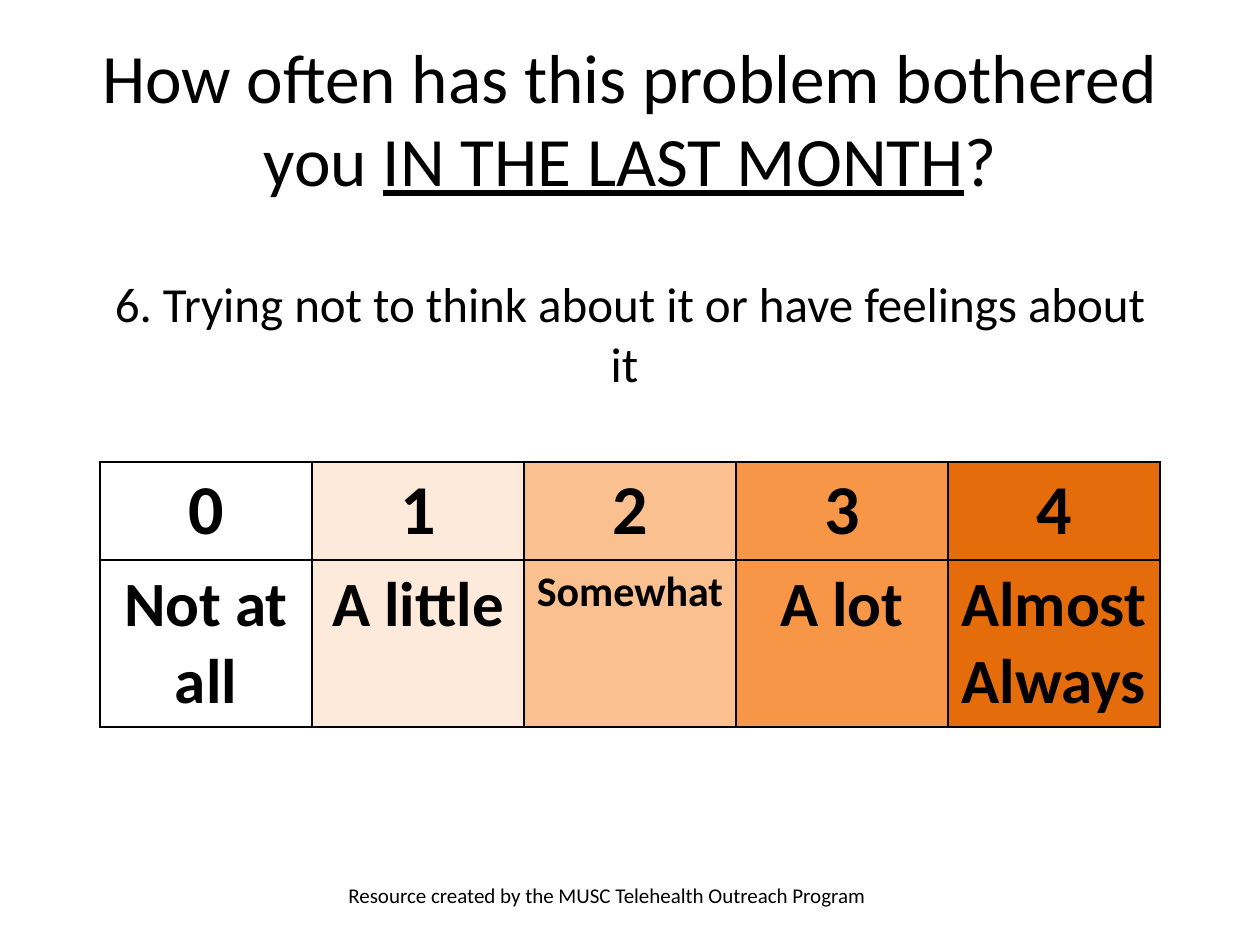
from dataclasses import dataclass

from lxml import etree
from pptx import Presentation
from pptx import util as u
from pptx.dml.color import RGBColor
from pptx.enum import text
from pptx.oxml.ns import qn

PX = u.Inches(1) / 126


@dataclass(frozen=True)
class Theme:
    font: str = "Calibri"
    ink: str = "000000"
    scale_fills: tuple = ("FFFFFF", "FDEADA", "FAC090", "F79646", "E46C0A")
    title: float = 39.6
    question: int = 28
    score: int = 40
    label: int = 36
    long_label: int = 24
    credit: int = 12
    border: int = 1


THEME = Theme()
ANSWERS = ("Not at all", "A little", "Somewhat", "A lot", "Almost Always")


def px(length):
    return u.Emu(round(length * PX))


def add_run(paragraph, words, size, bold=False, underline=False, align=None):
    if align is not None:
        paragraph.alignment = align
    run = paragraph.add_run()
    run.text = words
    font = run.font
    font.name, font.size = THEME.font, u.Pt(size)
    font.bold, font.underline = bold, underline
    font.color.rgb = RGBColor.from_string(THEME.ink)


def add_plain_table(slide, box, row_heights, column_count):
    """Add a table without header or banding; columns share the width equally."""
    left, top, width = box
    table = slide.shapes.add_table(
        len(row_heights), column_count,
        px(left), px(top), px(width), px(sum(row_heights))).table
    table.first_row = table.horz_banding = False
    for row, height in zip(table.rows, row_heights):
        row.height = px(height)
    for column in table.columns:
        column.width = px(width / column_count)
    return table


def fill_cell(cell, color):
    """Fill a cell and rule all its sides; borders must precede the fill in XML."""
    properties = cell._tc.get_or_add_tcPr()
    for side in ("a:lnL", "a:lnR", "a:lnT", "a:lnB"):
        line = etree.SubElement(properties, qn(side), w=str(u.Pt(THEME.border)))
        solid = etree.SubElement(line, qn("a:solidFill"))
        etree.SubElement(solid, qn("a:srgbClr"), val=THEME.ink)
    cell.fill.solid()
    cell.fill.fore_color.rgb = RGBColor.from_string(color)


def place_title(slide, left, top, width, height):
    title = slide.shapes.title
    title.left, title.top, title.width, title.height = map(
        px, (left, top, width, height))
    frame = title.text_frame
    frame.word_wrap = True
    frame.auto_size = text.MSO_AUTO_SIZE.NONE
    frame.vertical_anchor = text.MSO_ANCHOR.MIDDLE
    paragraph = frame.paragraphs[0]
    add_run(paragraph, "How often has this problem bothered you ", THEME.title,
            align=text.PP_ALIGN.CENTER)
    add_run(paragraph, "IN THE LAST MONTH", THEME.title, underline=True)
    add_run(paragraph, "?", THEME.title)


def place_question(slide, left, top, width, height):
    cell = add_plain_table(slide, (left, top, width), [height], 1).cell(0, 0)
    cell.fill.background()
    cell.margin_left = cell.margin_right = u.Inches(0.05)
    cell.margin_top = cell.margin_bottom = 0
    add_run(cell.text_frame.paragraphs[0],
            "6. Trying not to think about it or have feelings about it ",
            THEME.question, align=text.PP_ALIGN.CENTER)


def place_answer_scale(slide, left, top, width, row_heights):
    table = add_plain_table(slide, (left, top, width), row_heights, len(ANSWERS))
    for score, (answer, color) in enumerate(zip(ANSWERS, THEME.scale_fills)):
        label_size = THEME.long_label if answer == "Somewhat" else THEME.label
        entries = ((str(score), THEME.score), (answer, label_size))
        for row, (words, size) in enumerate(entries):
            cell = table.cell(row, score)
            fill_cell(cell, color)
            add_run(cell.text_frame.paragraphs[0], words, size, bold=True,
                    align=text.PP_ALIGN.CENTER)


def place_credit(slide, left, top, width, height):
    frame = slide.shapes.add_textbox(*map(px, (left, top, width, height))).text_frame
    frame.word_wrap = True
    add_run(frame.paragraphs[0],
            "Resource created by the MUSC Telehealth Outreach Program", THEME.credit)


def main():
    presentation = Presentation()
    presentation.slide_width, presentation.slide_height = px(1260), px(945)
    slide = presentation.slides.add_slide(
        presentation.slide_layouts.get_by_name("Title Only"))
    place_title(slide, 63, 38, 1134, 158)
    place_credit(slide, 336, 876, 567, 50)
    place_answer_scale(slide, 100, 462, 1060, [98, 167])
    place_question(slide, 100, 276, 1060, 117)
    presentation.save("out.pptx")


if __name__ == "__main__":
    main()
